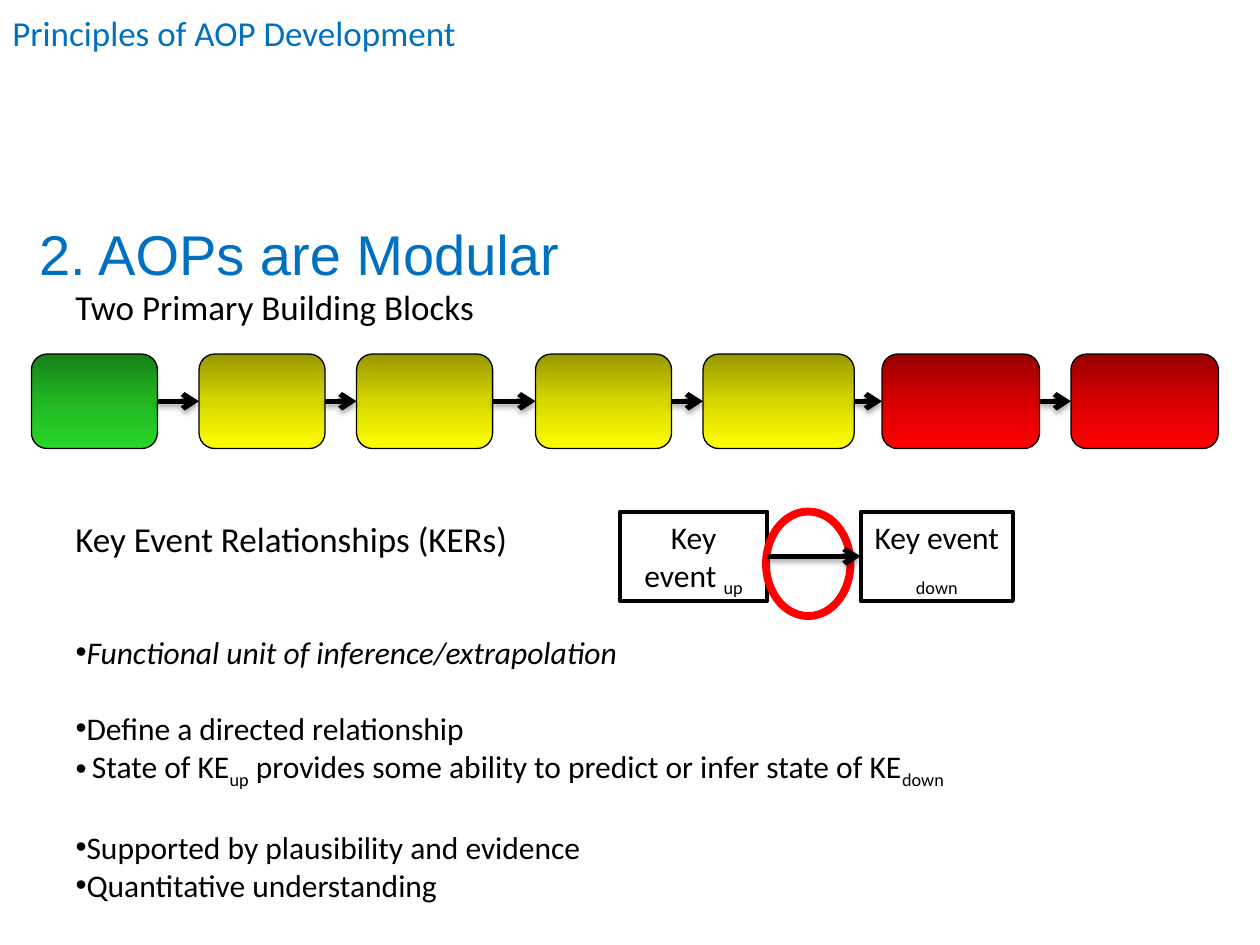
"""Build the slide on modular AOPs: a chain of key events and their relationships."""
import copy

import pptx
import pptx.dml.color
import pptx.enum.shapes
import pptx.enum.text
import pptx.oxml
import pptx.oxml.ns
import pptx.util

Inches, Pt = pptx.util.Inches, pptx.util.Pt
SHAPE = pptx.enum.shapes.MSO_SHAPE
ALIGN = pptx.enum.text.PP_ALIGN
NS = pptx.oxml.ns.nsdecls("a")

BLUE, BLACK, RED = "0070C0", "000000", "FF0000"
TITLE = ("2. AOPs are Modular", (0.21, 1.69, 8.29, 0.64))
LABELS = [
    ("Principles of AOP Development", (0, 0.04, 5.23, 0.44), BLUE),
    ("Two Primary Building Blocks", (0.5, 2.22, 4.92, 0.44), BLACK),
    ("Key Event Relationships (KERs)", (0.5, 4.06, 4.17, 0.44), BLACK),
]
BULLETS_AT = (0.5, 4.97, 8.75, 2.52)
BULLETS = [
    ("Functional unit of inference/extrapolation", dict(italic=True)),
    ("Define a directed relationship", dict(before=22)),
    ("State of KE_up_ provides some ability to predict or infer state of KE_down_", dict(indent=0.13)),
    ("Supported by plausibility and evidence", dict(before=22)),
    ("Quantitative understanding", {}),
]
GRADIENTS = {
    "green": ("178017", "21B621", "28D728"),
    "yellow": ("979700", "D7D700", "FFFF00"),
    "red": ("970000", "D70000", "FF0000"),
}
CHAIN_TOP, CHAIN_HEIGHT = 2.81, 0.75
CHAIN = [
    ("green", 0.25, 1), ("yellow", 1.58, 1), ("yellow", 2.83, 1.08), ("yellow", 4.25, 1.08),
    ("yellow", 5.58, 1.2), ("red", 7, 1.25), ("red", 8.5, 1.17),
]
KEY_EVENTS = [("Key event _up_", (4.92, 4.06, 1.17, 0.71)), ("Key event _down_", (6.83, 4.06, 1.21, 0.71))]
RING_AT = (6.08, 4.06, 0.67, 0.83)


def rgb(color):
    return pptx.dml.color.RGBColor.from_string(color)


def place(sp, at):
    sp.left, sp.top, sp.width, sp.height = map(Inches, at)


def write(p, text, size=18, font="Calibri", color=BLACK, italic=False, align=ALIGN.LEFT,
          before=0, indent=0, bullet=False):
    """Fill a paragraph; parts between underscores become subscripts."""
    pPr = p._p.get_or_add_pPr()
    pPr.set("marL", str(Inches(indent)))
    pPr.set("indent", str(-Inches(indent)))
    kind = 'buChar %s char="•"' if bullet else "buNone %s"
    pPr.append(pptx.oxml.parse_xml(f"<a:{kind % NS}/>"))
    p.alignment, p.space_before = align, Pt(before)
    for i, part in enumerate(text.split("_")):
        if part:
            r = p.add_run()
            r.text = part
            r.font.size, r.font.name, r.font.italic = Pt(size), font, italic
            r.font.color.rgb = rgb(color)
            if i % 2:
                r.font._element.set("baseline", "-25000")


def frame(sp):
    tf = sp.text_frame
    tf.word_wrap = True
    tf.auto_size = pptx.enum.text.MSO_AUTO_SIZE.NONE
    tf.vertical_anchor = pptx.enum.text.MSO_ANCHOR.TOP
    return tf


def add_shape(s, kind, at, line, width):
    sp = s.shapes.add_shape(kind, *map(Inches, at))
    sp.shadow.inherit = False
    sp.fill.background()
    sp.line.color.rgb, sp.line.width = rgb(line), Pt(width)
    return sp


def shade(sp, colors):
    sp.fill.gradient()
    sp.fill.gradient_angle = 270
    first = sp.fill.gradient_stops[0]._gs
    first.addnext(copy.deepcopy(first))
    for stop, color, position in zip(sp.fill.gradient_stops, colors, (0, 0.5, 1)):
        stop.color.rgb, stop.position = rgb(color), position


def add_arrow(s, start, end):
    cn = s.shapes.add_connector(pptx.enum.shapes.MSO_CONNECTOR.STRAIGHT, 0, 0, 0, 0)
    cn.begin_connect(start, 3)
    cn.end_connect(end, 1)
    cn.line.color.rgb, cn.line.width = rgb(BLACK), Pt(3)
    cn.line._get_or_add_ln().append(pptx.oxml.parse_xml(f'<a:tailEnd {NS} type="arrow"/>'))
    cn._element.spPr.append(pptx.oxml.parse_xml(
        f'<a:effectLst {NS}><a:outerShdw blurRad="40000" dist="23000" dir="5400000" rotWithShape="0">'
        '<a:srgbClr val="000000"><a:alpha val="35000"/></a:srgbClr></a:outerShdw></a:effectLst>'))


def main():
    prs = pptx.Presentation()
    prs.slide_width, prs.slide_height = Inches(10), Inches(7.5)
    s = prs.slides.add_slide(prs.slide_layouts[1])

    text, at = TITLE
    place(s.shapes.title, at)
    write(frame(s.shapes.title).paragraphs[0], text, size=32, font="Arial", color=BLUE, indent=0.12)

    body = s.placeholders[1]
    place(body, BULLETS_AT)
    tf = frame(body)
    for i, (text, style) in enumerate(BULLETS):
        p = tf.add_paragraph() if i else tf.paragraphs[0]
        write(p, text, bullet=True, **style)

    for text, at, color in LABELS:
        box = s.shapes.add_textbox(*map(Inches, at))
        write(frame(box).paragraphs[0], text, size=20, color=color)

    events = []
    for text, at in KEY_EVENTS:
        sp = add_shape(s, SHAPE.RECTANGLE, at, BLACK, 2.25)
        write(frame(sp).paragraphs[0], text, align=ALIGN.CENTER)
        events.append(sp)
    add_shape(s, SHAPE.OVAL, RING_AT, RED, 4.5)
    add_arrow(s, *events)

    chain = []
    for name, left, width in CHAIN:
        sp = add_shape(s, SHAPE.ROUNDED_RECTANGLE, (left, CHAIN_TOP, width, CHAIN_HEIGHT), BLACK, 0.75)
        shade(sp, GRADIENTS[name])
        chain.append(sp)
    for start, end in zip(chain, chain[1:]):
        add_arrow(s, start, end)

    prs.save("out.pptx")


if __name__ == "__main__":
    main()
